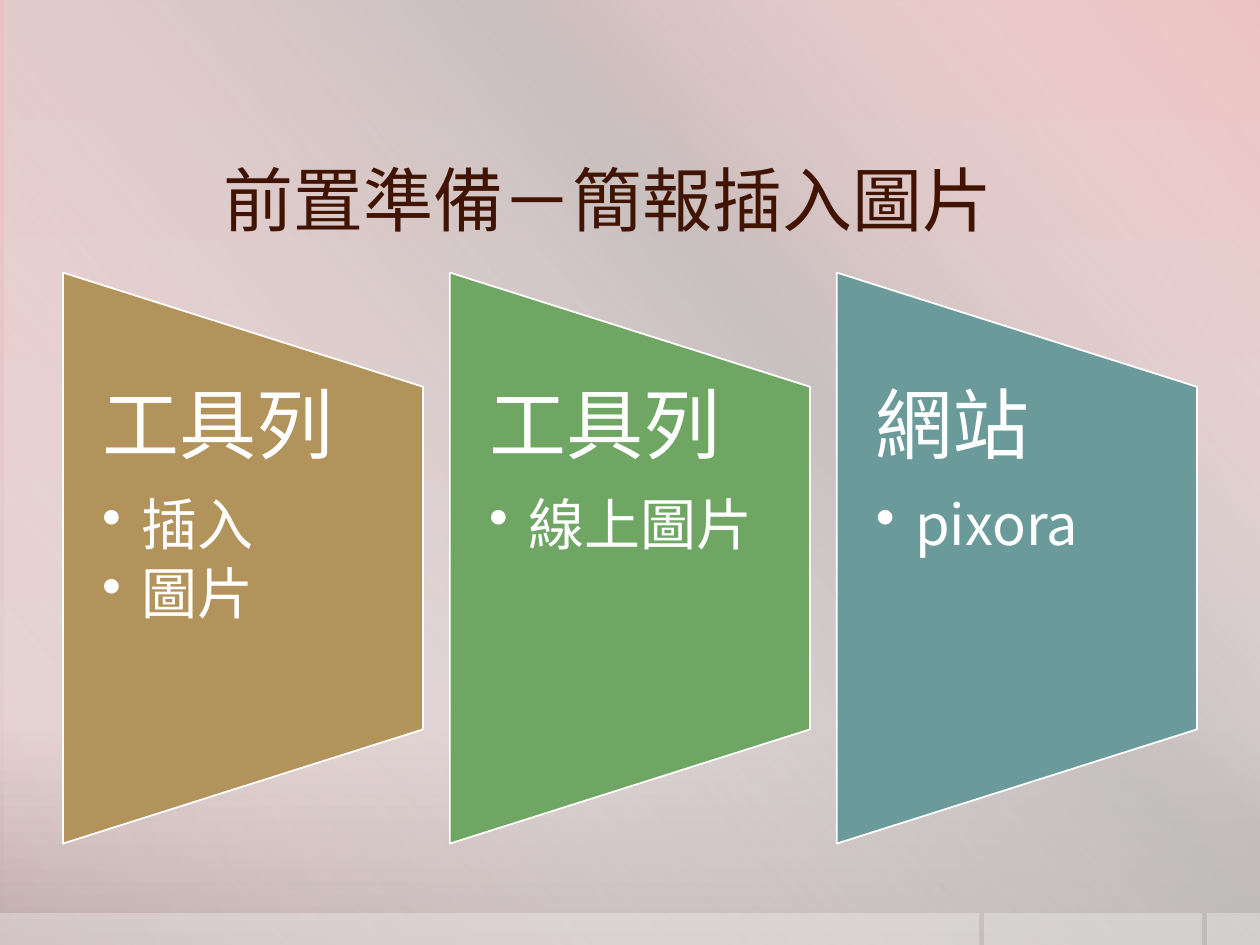
"""Build a slide with three tapered panels on ways to insert pictures."""
from lxml import etree
from pptx import Presentation
from pptx import util as u
from pptx.dml.color import RGBColor
from pptx.enum import shapes, text
from pptx.oxml.ns import qn

FONT = "Noto Sans CJK SC"
COLORS = {"white": "FFFFFF", "title": "411401", "silver": "BFBFBF",
          "rose": "EDC1C1", "blush": "E3CDCD", "mauve": "BFABAB",
          "sand": "B2935C", "green": "6FA663", "teal": "6A9A9A"}
FRAME = {"word_wrap": True, "auto_size": text.MSO_AUTO_SIZE.NONE,
         "margin_top": 0, "margin_bottom": 0,
         "margin_left": u.Cm(0.79), "margin_right": u.Cm(0.79)}
TITLE_BOX = {"left": u.Cm(4.5), "top": u.Cm(2.74),
             "width": u.Cm(19.63), "height": u.Cm(2.54)}
TITLE_FRAME = FRAME | {"margin_left": 0, "margin_right": 0,
                       "margin_top": u.Cm(0.13), "margin_bottom": u.Cm(0.13),
                       "vertical_anchor": text.MSO_ANCHOR.MIDDLE}
HEADING = {"line_spacing": 0.9, "space_before": u.Pt(0), "space_after": u.Pt(15.4),
           "alignment": text.PP_ALIGN.LEFT}
BULLET = HEADING | {"level": 1, "space_after": u.Pt(4.8)}


def set_gradient(element, stops, angle):
    grad = element.find(".//" + qn("a:gradFill"))
    for child in list(grad):
        grad.remove(child)
    gs_list = etree.SubElement(grad, qn("a:gsLst"))
    for pos, color, alpha in stops:
        gs = etree.SubElement(gs_list, qn("a:gs"), pos=str(pos * 1000))
        clr = etree.SubElement(gs, qn("a:srgbClr"), val=COLORS[color])
        etree.SubElement(clr, qn("a:alpha"), val=str(alpha * 1000))
    etree.SubElement(grad, qn("a:lin"), ang=str(angle * 60000), scaled="0")


def write(p, words, size, color, formats):
    for name, value in formats.items():
        setattr(p, name, value)
    r = p.add_run()
    r.text = words
    r.font.size = u.Pt(size)
    r.font.name = FONT
    r.font.color.rgb = RGBColor.from_string(COLORS[color])
    etree.SubElement(r.font._element, qn("a:ea"), typeface=FONT)


prs = Presentation()
prs.slide_width, prs.slide_height = u.Cm(25.4), u.Cm(19.05)
s = prs.slides.add_slide(prs.slide_layouts[5])

s.background.fill.gradient()
set_gradient(s._element, [(0, "rose", 100), (76, "blush", 100), (100, "mauve", 100)], 90)

sheen = s.shapes.add_shape(shapes.MSO_SHAPE.RECTANGLE, u.Cm(0.1), 0,
                           prs.slide_width, prs.slide_height)
sheen.shadow.inherit = False
sheen.line.fill.background()
sheen.fill.gradient()
set_gradient(sheen._element, [(0, "white", 0), (34, "silver", 61),
                              (38, "silver", 76), (100, "white", 0)], 140)

for left, width in [(24.33, 1.07), (19.84, 4.39), (0, 19.74)]:
    sp = s.shapes.add_shape(shapes.MSO_SHAPE.RECTANGLE, u.Cm(left), u.Cm(18.41),
                            u.Cm(width), u.Cm(0.64))
    sp.shadow.inherit = False
    sp.line.fill.background()
    sp.fill.solid()
    sp.fill.fore_color.rgb = RGBColor.from_string(COLORS["white"])
    clr = sp._element.spPr.find(".//" + qn("a:srgbClr"))
    etree.SubElement(clr, qn("a:alpha"), val="30000")

title = s.shapes.title
s.shapes._spTree.append(title._element)
for name, value in TITLE_BOX.items():
    setattr(title, name, value)
for name, value in TITLE_FRAME.items():
    setattr(title.text_frame, name, value)
write(title.text_frame.paragraphs[0], "前置準備－簡報插入圖片", 40, "title",
      {"alignment": text.PP_ALIGN.LEFT})

panels = [("sand", "工具列", ["插入", "圖片"]),
          ("green", "工具列", ["線上圖片"]),
          ("teal", "網站", ["pixora"])]
panel_w, panel_h, pitch, middle = 7.26, 11.51, 7.8, 11.25
for i, (color, heading, items) in enumerate(panels):
    left = 1.27 + i * pitch
    sp = s.shapes.add_shape(shapes.MSO_SHAPE.FLOWCHART_MANUAL_OPERATION,
                            u.Cm(left + (panel_w - panel_h) / 2),
                            u.Cm(middle - panel_w / 2), u.Cm(panel_h), u.Cm(panel_w))
    sp.rotation = 270
    sp.shadow.inherit = False
    sp.fill.solid()
    sp.fill.fore_color.rgb = RGBColor.from_string(COLORS[color])
    sp.line.color.rgb = RGBColor.from_string(COLORS["white"])
    sp.line.width = u.Pt(1)

    tf = s.shapes.add_textbox(u.Cm(left), u.Cm(7.8), u.Cm(panel_w), u.Cm(6.91)).text_frame
    for name, value in FRAME.items():
        setattr(tf, name, value)
    write(tf.paragraphs[0], heading, 44, "white", HEADING)
    for item in items:
        p = tf.add_paragraph()
        pPr = p._p.get_or_add_pPr()
        pPr.set("marL", str(u.Cm(0.79)))
        pPr.set("indent", str(-u.Cm(0.79)))
        etree.SubElement(pPr, qn("a:buChar"), char="•")
        write(p, item, 32, "white", BULLET)

prs.save("out.pptx")
